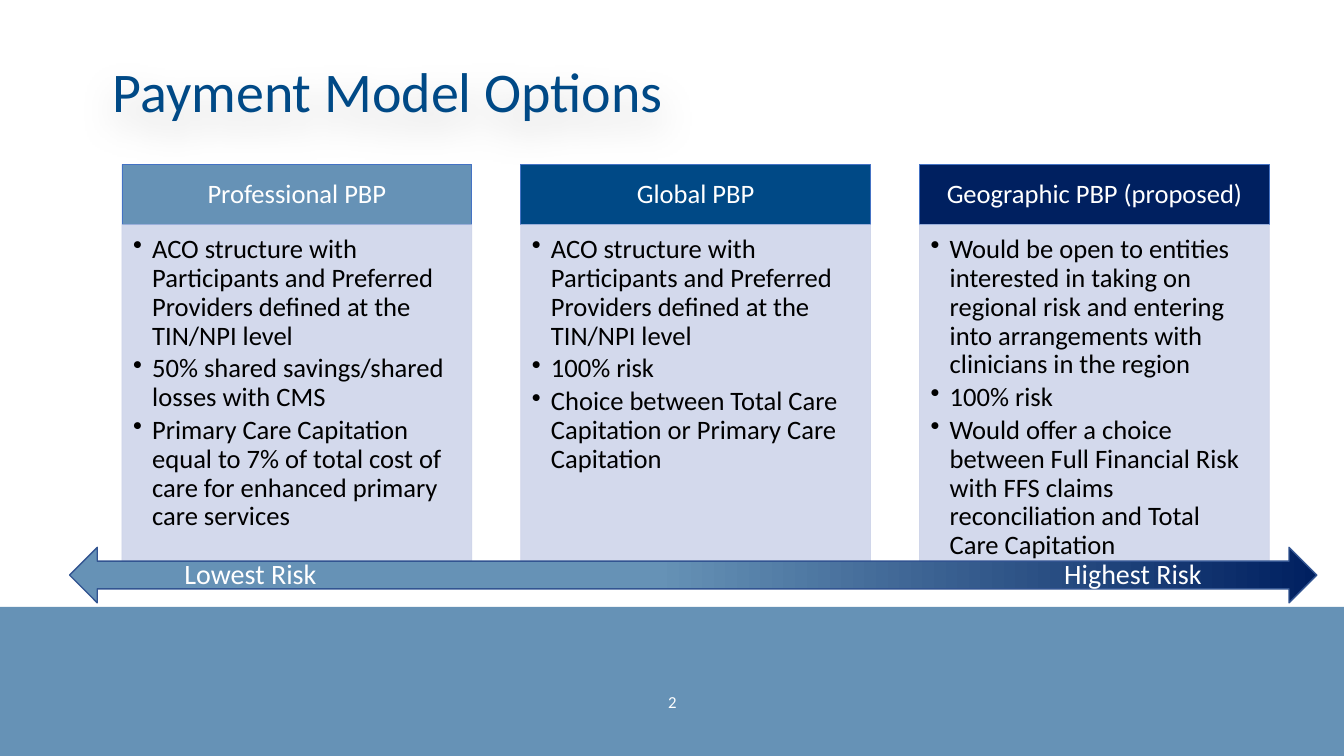
from copy import deepcopy
from dataclasses import dataclass

from lxml.etree import SubElement
from pptx import Presentation
from pptx.dml.color import RGBColor
from pptx.enum.shapes import MSO_SHAPE
from pptx.enum.text import MSO_ANCHOR, PP_ALIGN
from pptx.oxml.ns import qn
from pptx.util import Inches, Pt


@dataclass(frozen=True)
class Theme:
    """Colours, font and type sizes of the slide."""
    font: str = "Calibri"
    blue: str = "004986"
    steel: str = "6692B6"
    navy: str = "002060"
    panel: str = "CFD5EA"
    header_line: str = "4472C4"
    arrow_line: str = "325491"
    white: str = "FFFFFF"
    black: str = "000000"
    title_size: int = 40
    label_size: int = 20
    body_size: int = 19
    number_size: int = 12


THEME = Theme()
OPTIONS = [
    ("Professional PBP", THEME.steel, [
        "ACO structure with Participants and Preferred Providers defined at the TIN/NPI level",
        "50% shared savings/shared losses with CMS",
        "Primary Care Capitation equal to 7% of total cost of care for enhanced primary care services",
    ]),
    ("Global PBP", THEME.blue, [
        "ACO structure with Participants and Preferred Providers defined at the TIN/NPI level",
        "100% risk",
        "Choice between Total Care Capitation or Primary Care Capitation",
    ]),
    ("Geographic PBP (proposed)", THEME.navy, [
        "Would be open to entities interested in taking on regional risk and entering "
        "into arrangements with clinicians in the region",
        "100% risk",
        "Would offer a choice between Full Financial Risk with FFS claims reconciliation "
        "and Total Care Capitation",
    ]),
]


def set_alpha(element, percent):
    """Make every plain colour inside an element partly transparent."""
    for colour in element.iter(qn("a:srgbClr")):
        SubElement(colour, qn("a:alpha"), val=str(percent * 1000))


def add_block(slide, box, fill, line=None, kind=MSO_SHAPE.RECTANGLE, weight=0.5):
    """Add a flat preset shape, filled when a fill colour is given."""
    block = slide.shapes.add_shape(kind, *map(Inches, box))
    block.shadow.inherit = False
    if fill:
        block.fill.solid()
        block.fill.fore_color.rgb = RGBColor.from_string(fill)
    if line:
        block.line.color.rgb = RGBColor.from_string(line)
        block.line.width = Pt(weight)
    else:
        block.line.fill.background()
    return block


def set_frame(shape, anchor, insets):
    """Set wrapping, anchor and insets, and return the text frame."""
    frame = shape.text_frame
    frame.word_wrap = True
    frame.vertical_anchor = anchor
    frame.margin_left, frame.margin_top, frame.margin_right, frame.margin_bottom = map(Inches, insets)
    return frame


def write(paragraph, wording, size, colour, align=PP_ALIGN.LEFT, spacing=0.9):
    """Write one run into a paragraph."""
    paragraph.alignment = align
    paragraph.line_spacing = spacing
    run = paragraph.add_run()
    run.text = wording
    run.font.name = THEME.font
    run.font.size = Pt(size)
    run.font.color.rgb = RGBColor.from_string(colour)


def add_label(slide, box, wording, size, colour, align, anchor=MSO_ANCHOR.MIDDLE, insets=(0, 0, 0, 0)):
    """Add a one-line text box."""
    label = slide.shapes.add_textbox(*map(Inches, box))
    write(set_frame(label, anchor, insets).paragraphs[0], wording, size, colour, align)
    return label


def add_title(slide, box):
    """Add the slide title with its soft shadow."""
    title = add_label(slide, box, "Payment Model Options", THEME.title_size, THEME.blue,
                      PP_ALIGN.LEFT, MSO_ANCHOR.BOTTOM, (0.1, 0.05, 0.1, 0.05))
    effects = SubElement(title._element.spPr, qn("a:effectLst"))
    shadow = SubElement(effects, qn("a:outerShdw"), blurRad=str(Inches(0.4)),
                        dist=str(Inches(0.15)), dir="5400000", algn="ctr", rotWithShape="0")
    SubElement(shadow, qn("a:srgbClr"), val=THEME.black)
    set_alpha(effects, 20)


def add_footer(slide, box):
    """Add the footer band with the slide number."""
    left, top, width, height = box
    add_block(slide, box, THEME.steel)
    add_label(slide, (left + 5.17, top + 0.75, 3, 0.4), "2", THEME.number_size,
              THEME.white, PP_ALIGN.CENTER)


def add_option(slide, box, name, colour, points):
    """Add one payment option: a header above a bulleted panel."""
    left, top, width, height = box
    header_height = 0.6
    header = add_block(slide, (left, top, width, header_height), colour, THEME.header_line)
    header_frame = set_frame(header, MSO_ANCHOR.MIDDLE, (0.15, 0.08, 0.15, 0.08))
    write(header_frame.paragraphs[0], name, THEME.body_size, THEME.white, PP_ALIGN.CENTER)

    panel = add_block(slide, (left, top + header_height, width, height - header_height),
                      THEME.panel, THEME.panel)
    set_alpha(panel._element.spPr, 90)
    frame = set_frame(panel, MSO_ANCHOR.TOP, (0.11, 0.11, 0.15, 0.17))
    for index, point in enumerate(points):
        paragraph = frame.add_paragraph() if index else frame.paragraphs[0]
        properties = paragraph._p.get_or_add_pPr()
        properties.set("marL", str(Inches(0.19)))
        properties.set("indent", str(-Inches(0.19)))
        SubElement(properties, qn("a:buChar"), char="•")
        paragraph.space_after = Pt(3)
        write(paragraph, point, THEME.body_size, THEME.black)


def add_options(slide, box):
    """Lay the payment options out in equal columns."""
    left, top, width, height = box
    column_width = 3.47
    step = (width - column_width) / (len(OPTIONS) - 1)
    for index, option in enumerate(OPTIONS):
        add_option(slide, (left + index * step, top, column_width, height), *option)


def add_risk_arrow(slide, box):
    """Add the double arrow that runs from lowest to highest risk."""
    left, top, width, height = box
    arrow = add_block(slide, box, None, THEME.arrow_line, MSO_SHAPE.LEFT_RIGHT_ARROW, 1)
    arrow.fill.gradient()
    arrow.fill.gradient_angle = 0
    stop_list = arrow._element.spPr.find(".//" + qn("a:gsLst"))
    stop_list.insert(0, deepcopy(stop_list[0]))
    ramp = [(0, THEME.steel), (0.47, THEME.steel), (1, THEME.navy)]
    for stop, (position, colour) in zip(arrow.fill.gradient_stops, ramp):
        stop.position = position
        stop.color.rgb = RGBColor.from_string(colour)

    inset, label_width = 1.14, 2
    ends = [("Lowest Risk", left + inset, PP_ALIGN.LEFT),
            ("Highest Risk", left + width - inset - label_width, PP_ALIGN.RIGHT)]
    for wording, label_left, align in ends:
        add_label(slide, (label_left, top, label_width, height), wording,
                  THEME.label_size, THEME.white, align)


def main():
    """Build and save the slide."""
    deck = Presentation()
    deck.slide_width, deck.slide_height = Inches(13.33), Inches(7.5)
    slide = deck.slides.add_slide(deck.slide_layouts[6])
    add_footer(slide, (0, 6.02, 13.33, 1.48))
    add_title(slide, (1.02, 0.48, 10, 0.81))
    add_options(slide, (1.21, 1.63, 11.38, 4.02))
    add_risk_arrow(slide, (0.69, 5.43, 12.37, 0.55))
    deck.save("out.pptx")


if __name__ == "__main__":
    main()
